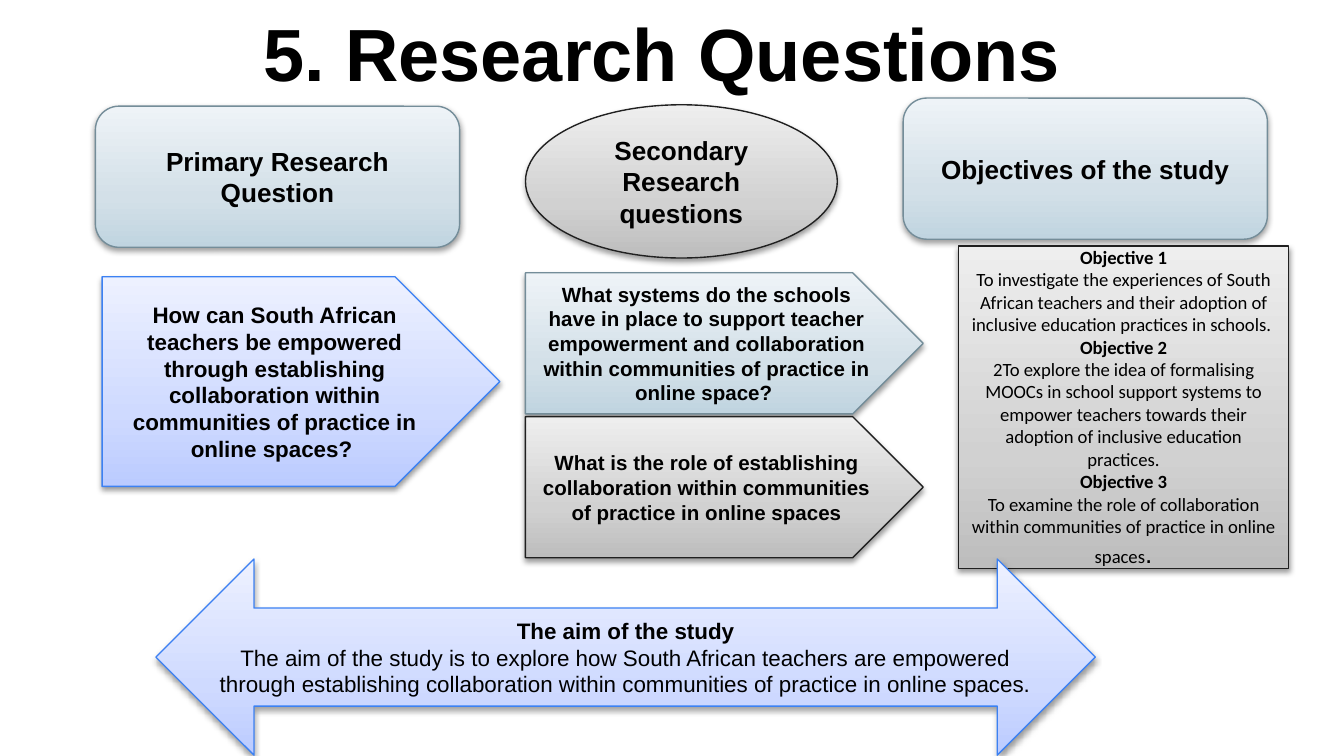
from dataclasses import dataclass
from typing import NamedTuple

from lxml import etree
from pptx import Presentation
from pptx.dml.color import RGBColor
from pptx.enum import shapes, text
from pptx.oxml import ns
from pptx.util import Inches, Pt

MSO = shapes.MSO_SHAPE


class Palette(NamedTuple):
    dark: str
    mid: str
    light: str
    line: str


@dataclass(frozen=True)
class Theme:
    teal: Palette = Palette("C0D4E0", "D3E0E8", "EEF3F7", "748D99")
    grey: Palette = Palette("BDBDBD", "D1D1D1", "EEEEEE", "202020")
    blue: Palette = Palette("BBCBFF", "CFDAFF", "EDF1FF", "3C81F3")
    ink: str = "000000"
    font: str = "Arial"
    list_font: str = "Calibri"
    title: float = 39.6
    heading: float = 14
    body: float = 12
    question: float = 11
    objective: float = 10


THEME = Theme()


class Run(NamedTuple):
    text: str
    size: float
    font: str


class Para(NamedTuple):
    text: str
    bold: bool = True
    tail: Run | None = None  # closing run in another font


@dataclass(frozen=True)
class Box:
    kind: shapes.MSO_SHAPE
    left: float
    top: float
    width: float
    height: float
    palette: Palette
    size: float
    paras: list[Para]
    font: str = THEME.font


def add_element(parent, tag: str, **attrs):
    values = {key: str(value) for key, value in attrs.items()}
    return etree.SubElement(parent, ns.qn(tag), values)


def paint(sp, palette: Palette) -> None:
    """Vertical gradient, thin outline and soft shadow below."""
    sp.fill.background()
    sp.line.color.rgb = RGBColor.from_string(palette.line)
    sp.line.width = Pt(0.75)
    sp.shadow.inherit = False
    props = sp._element.spPr

    grad = etree.Element(ns.qn("a:gradFill"), rotWithShape="1")
    stops = add_element(grad, "a:gsLst")
    for pos, color in zip((0, 35, 100), palette[:3]):
        stop = add_element(stops, "a:gs", pos=pos * 1000)
        add_element(stop, "a:srgbClr", val=color)
    add_element(grad, "a:lin", ang=270 * 60000, scaled=0)
    props.replace(props.find(ns.qn("a:noFill")), grad)

    shadow = add_element(props.find(ns.qn("a:effectLst")), "a:outerShdw",
                         blurRad=Pt(3.1), dist=Pt(1.6), dir=90 * 60000, rotWithShape=0)
    color = add_element(shadow, "a:srgbClr", val=THEME.ink)
    add_element(color, "a:alpha", val=38000)


def write(tf, paras: list[Para], size: float, font: str) -> None:
    tf.word_wrap = True
    for i, para in enumerate(paras):
        p = tf.add_paragraph() if i else tf.paragraphs[0]
        p.alignment = text.PP_ALIGN.CENTER
        p.font.name, p.font.size, p.font.bold = font, Pt(size), para.bold
        p.font.color.rgb = RGBColor.from_string(THEME.ink)
        p.add_run().text = para.text
        if para.tail:
            r = p.add_run()
            r.text = para.tail.text
            r.font.size, r.font.name = Pt(para.tail.size), para.tail.font


def add_title(s, title: str) -> None:
    sp = s.shapes.add_textbox(Inches(0.34), Inches(-0.04), Inches(9.32), Inches(0.63))
    tf = sp.text_frame
    tf.margin_left = tf.margin_top = tf.margin_bottom = Inches(0.1)
    tf.margin_right = Inches(0.25)
    tf.vertical_anchor = text.MSO_ANCHOR.TOP
    write(tf, [Para(title)], THEME.title, THEME.font)


def add_box(s, box: Box) -> None:
    sp = s.shapes.add_shape(box.kind, Inches(box.left), Inches(box.top),
                            Inches(box.width), Inches(box.height))
    paint(sp, box.palette)
    sp.text_frame.vertical_anchor = text.MSO_ANCHOR.MIDDLE
    write(sp.text_frame, box.paras, box.size, box.font)


BOXES = [
    # Column headings
    Box(MSO.ROUNDED_RECTANGLE, 0.71, 0.79, 2.71, 1.05, THEME.teal, THEME.heading,
        [Para("Primary Research Question")]),
    Box(MSO.OVAL, 3.91, 0.78, 2.32, 1.14, THEME.grey, THEME.heading,
        [Para("Secondary Research questions")]),
    Box(MSO.ROUNDED_RECTANGLE, 6.72, 0.73, 2.71, 1.05, THEME.teal, THEME.heading,
        [Para("Objectives of the study")]),
    # Questions
    Box(MSO.PENTAGON, 0.76, 2.06, 2.96, 1.56, THEME.blue, THEME.body,
        [Para("How can South African teachers be empowered through establishing "
              "collaboration within communities of practice in online spaces? ")]),
    Box(MSO.PENTAGON, 3.91, 2.03, 2.96, 1.05, THEME.teal, THEME.question,
        [Para("What systems do the schools have in place to support teacher "
              "empowerment and collaboration within communities of practice in "
              "online space? ")]),
    Box(MSO.PENTAGON, 3.91, 3.1, 2.96, 1.05, THEME.grey, THEME.question,
        [Para("What is the role of establishing collaboration within communities "
              "of practice in online spaces")]),
    # Objectives
    Box(MSO.RECTANGLE, 7.13, 1.83, 2.46, 2.4, THEME.grey, THEME.objective, [
        Para("Objective 1"),
        Para("To investigate the experiences of South African teachers and their "
             "adoption of inclusive education practices in schools. ", False),
        Para("Objective 2"),
        Para("2To explore the idea of formalising MOOCs in school support systems "
             "to empower teachers towards their adoption of inclusive education "
             "practices.", False),
        Para("Objective 3"),
        Para("To examine the role of collaboration within communities of practice "
             "in online spaces", False, Run(".", THEME.heading, THEME.font)),
    ], THEME.list_font),
    # Aim
    Box(MSO.LEFT_RIGHT_ARROW, 1.16, 4.16, 6.99, 1.46, THEME.blue, THEME.body, [
        Para("The aim of the study"),
        Para("The aim of the study is to explore how South African teachers are "
             "empowered through establishing collaboration within communities of "
             "practice in online spaces. ", False),
    ]),
]


def main() -> None:
    prs = Presentation()
    prs.slide_width = Inches(10)
    prs.slide_height = prs.slide_width * 9 // 16
    s = prs.slides.add_slide(prs.slide_layouts[6])
    add_title(s, "5. Research Questions")
    for box in BOXES:
        add_box(s, box)
    prs.save("out.pptx")


if __name__ == "__main__":
    main()
